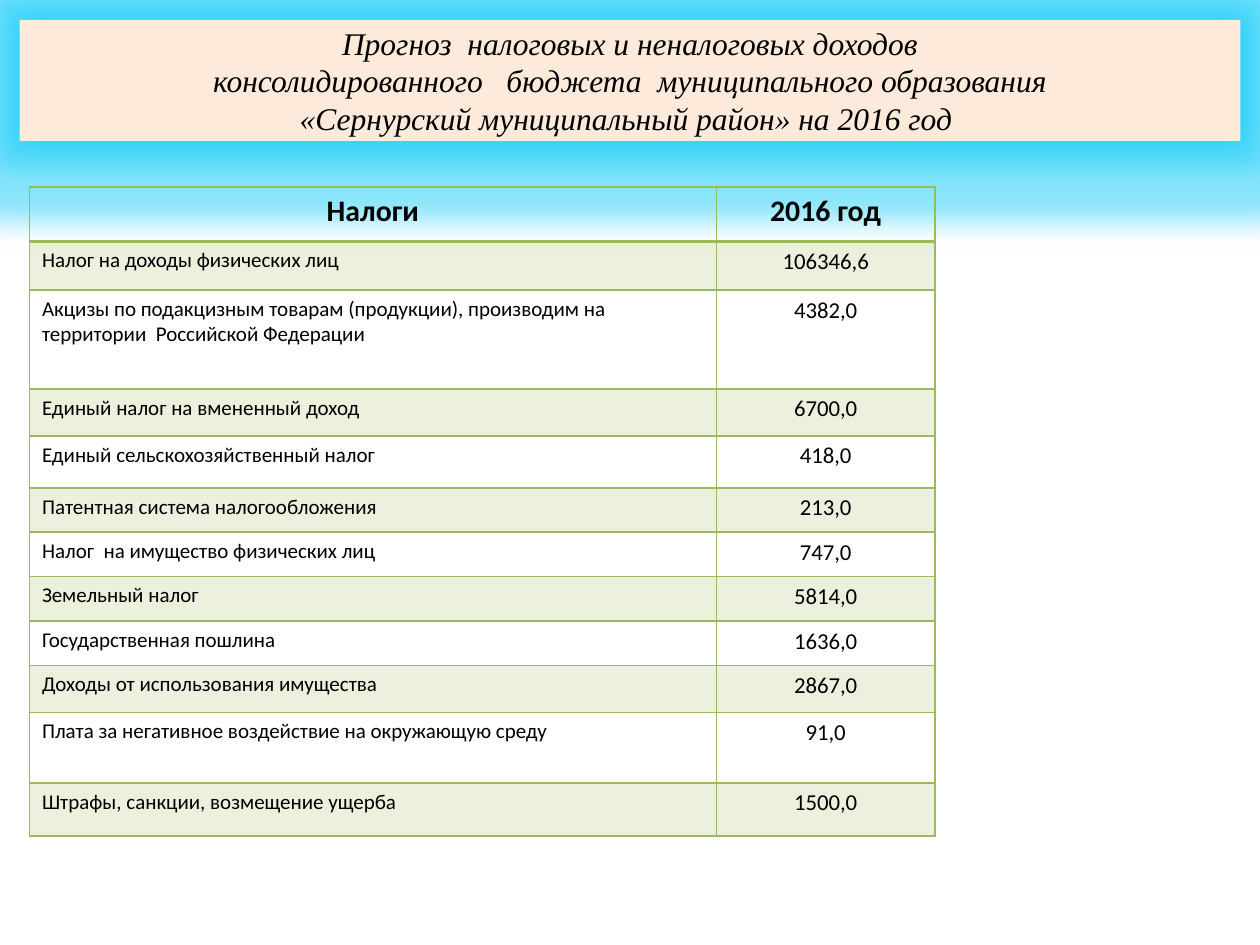
from lxml.etree import SubElement
from pptx import Presentation
from pptx.dml.color import RGBColor
from pptx.enum.shapes import MSO_SHAPE as Shape
from pptx.enum.text import MSO_ANCHOR as Anchor, PP_ALIGN as Align
from pptx.oxml.ns import qn
from pptx.util import Pt

GREEN = "9BBB59"
CYAN = "00C8F8"
TITLE = [
    "Прогноз  налоговых и неналоговых доходов",
    " консолидированного   бюджета  муниципального образования ",
    "«Сернурский муниципальный район» на 2016 год ",
]
TAXES = [
    ("Налоги", "2016 год", 31),
    ("Налог на доходы физических лиц", "106346,6", 28),
    ("Акцизы по подакцизным товарам (продукции), производим на "
     "территории  Российской Федерации", "4382,0", 56.5),
    ("Единый налог на вмененный доход", "6700,0", 26.8),
    ("Единый сельскохозяйственный налог", "418,0", 29.7),
    ("Патентная система налогообложения", "213,0", 25.4),
    ("Налог  на имущество физических лиц", "747,0", 25.4),
    ("Земельный налог", "5814,0", 25.4),
    ("Государственная пошлина", "1636,0", 25.4),
    ("Доходы от использования имущества", "2867,0", 26.8),
    ("Плата за негативное воздействие на окружающую среду", "91,0", 40.3),
    ("Штрафы, санкции, возмещение ущерба", "1500,0", 30.2),
]


def paint(color, value):
    color.rgb = RGBColor.from_string(value)


def add_color(parent, value, alpha=100):
    color = SubElement(parent, qn("a:srgbClr"), val=value)
    if alpha < 100:
        SubElement(color, qn("a:alpha"), val=str(alpha * 1000))
    return color


def write(frame, lines, size, font="Calibri", color="000000", bold=False,
          italic=False, align=Align.LEFT):
    frame.word_wrap = True
    for index, line in enumerate(lines):
        para = frame.paragraphs[0] if index == 0 else frame.add_paragraph()
        para.alignment = align
        span = para.add_run()
        span.text = line
        span.font.name = font
        span.font.size = Pt(size)
        span.font.bold = bold
        span.font.italic = italic
        paint(span.font.color, color)


class SlideBuilder:
    def __init__(self, page):
        self.page = page
        self.line_color = GREEN
        self.band_color = GREEN
        self.band_alpha = 20

    def banner(self, lines, left, top, width, height, fill):
        box = self.page.shapes.add_shape(
            Shape.RECTANGLE, Pt(left), Pt(top), Pt(width), Pt(height))
        box.shadow.inherit = False
        box.fill.solid()
        paint(box.fill.fore_color, fill)
        box.line.fill.background()
        effects = box._element.spPr.find(qn("a:effectLst"))
        glow = SubElement(effects, qn("a:glow"), rad=str(Pt(30)))
        add_color(glow, CYAN, 40)
        shadow = SubElement(effects, qn("a:outerShdw"), blurRad=str(Pt(14)),
                            dist="0", algn="ctr", rotWithShape="0")
        add_color(shadow, CYAN, 60)
        box.text_frame.vertical_anchor = Anchor.MIDDLE
        write(box.text_frame, lines, 18, font="Times New Roman", italic=True,
              align=Align.CENTER)

    def table(self, rows, left, top, widths):
        heights = [height for *_, height in rows]
        frame = self.page.shapes.add_table(
            len(rows), len(widths), Pt(left), Pt(top),
            Pt(sum(widths)), Pt(sum(heights)))
        table = frame.table
        for column, width in zip(table.columns, widths):
            column.width = Pt(width)
        for index, (name, amount, height) in enumerate(rows):
            table.rows[index].height = Pt(height)
            header = index == 0
            for position, text in enumerate((name, amount)):
                cell = table.cell(index, position)
                centered = header or position == 1
                size = 17 if header else (12, 13)[position]
                write(cell.text_frame, [text], size, bold=header,
                      align=Align.CENTER if centered else Align.LEFT)
                self.style_cell(cell, index)

    def style_cell(self, cell, index):
        properties = cell._tc.get_or_add_tcPr()
        edges = {"L": 1, "R": 1, "T": 2 if index == 1 else 1,
                 "B": 2 if index == 0 else 1}
        for side, width in edges.items():
            line = SubElement(properties, qn(f"a:ln{side}"), w=str(Pt(width)))
            add_color(SubElement(line, qn("a:solidFill")), self.line_color)
        if index % 2:
            fill = SubElement(properties, qn("a:solidFill"))
            add_color(fill, self.band_color, self.band_alpha)
        else:
            cell.fill.background()


def main():
    deck = Presentation()
    deck.slide_width, deck.slide_height = Pt(720), Pt(540)
    builder = SlideBuilder(deck.slides.add_slide(deck.slide_layouts[6]))
    builder.banner(TITLE, 11.3, 11.3, 697.5, 69.2, "FDEADA")
    builder.table(TAXES, 16.8, 106.8, [392.5, 125])
    deck.save("out.pptx")


if __name__ == "__main__":
    main()
